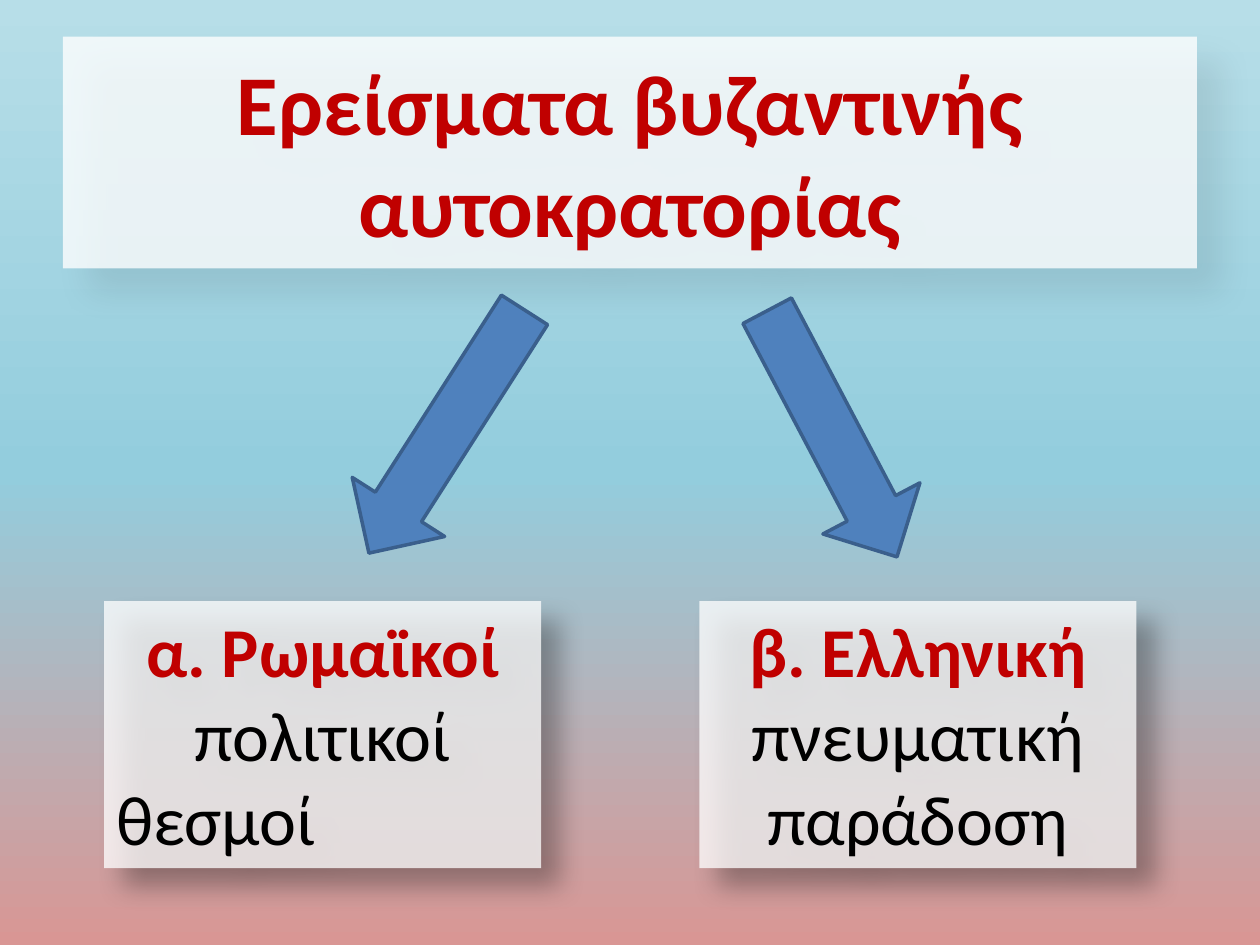
from lxml import etree
from pptx import Presentation
from pptx.dml.color import RGBColor
from pptx.enum.shapes import MSO_SHAPE
from pptx.enum.text import MSO_ANCHOR, MSO_AUTO_SIZE, PP_ALIGN
from pptx.oxml.ns import qn
from pptx.util import Cm, Pt

RECTANGLE, DOWN_ARROW = MSO_SHAPE.RECTANGLE, MSO_SHAPE.DOWN_ARROW
CENTER, LEFT = PP_ALIGN.CENTER, PP_ALIGN.LEFT
TOP, MIDDLE = MSO_ANCHOR.TOP, MSO_ANCHOR.MIDDLE
FIT_SHAPE, FIT_NONE = MSO_AUTO_SIZE.SHAPE_TO_FIT_TEXT, MSO_AUTO_SIZE.NONE


def rgb(hex_color):
    return RGBColor.from_string(hex_color)


def add_color(parent, hex_color, alpha=100):
    color = etree.SubElement(parent, qn("a:srgbClr"), val=hex_color)
    if alpha < 100:
        etree.SubElement(color, qn("a:alpha"), val=str(alpha * 1000))


class SlideBuilder:
    """Holds the style and the current slide, and draws each kind of element."""

    font = "Calibri"
    accent, ink, panel_fill = "C00000", "000000", "FFFFFF"
    arrow_fill, arrow_line = "4F81BD", "3A5F8C"

    def __init__(self, slide):
        self.slide = slide

    def background(self, stops):
        fill = self.slide.background.fill
        fill.gradient()
        fill.gradient_angle = 270
        stop_list = next(self.slide.background._cSld.iter(qn("a:gsLst")))
        for old_stop in list(stop_list):
            stop_list.remove(old_stop)
        for position, color in stops:
            stop = etree.SubElement(stop_list, qn("a:gs"), pos=str(position * 1000))
            add_color(stop, color)

    def shape(self, kind, left, top, width, height, fill):
        shape = self.slide.shapes.add_shape(kind, Cm(left), Cm(top), Cm(width), Cm(height))
        shape.shadow.inherit = False
        shape.fill.solid()
        shape.fill.fore_color.rgb = rgb(fill)
        return shape

    def panel(self, left, top, width, height, paragraphs, size, opacity, shadow,
              anchor=TOP, fit=FIT_SHAPE):
        panel = self.shape(RECTANGLE, left, top, width, height, self.panel_fill)
        panel.line.fill.background()
        properties = panel._element.spPr
        fill_color = properties.find(qn("a:solidFill")).find(qn("a:srgbClr"))
        etree.SubElement(fill_color, qn("a:alpha"), val=str(opacity * 1000))
        shadow_alpha, distance = shadow
        outer = etree.SubElement(
            properties.find(qn("a:effectLst")), qn("a:outerShdw"),
            blurRad=str(Pt(distance)), dist=str(Pt(distance)), dir="2700000",
            algn="tl", rotWithShape="0")
        add_color(outer, self.ink, shadow_alpha)

        frame = panel.text_frame
        frame.word_wrap = True
        frame.auto_size = fit
        frame.vertical_anchor = anchor
        for index, (alignment, runs) in enumerate(paragraphs):
            paragraph = frame.add_paragraph() if index else frame.paragraphs[0]
            paragraph.alignment = alignment
            for text, is_accent in runs:
                run = paragraph.add_run()
                run.text = text
                run.font.name = self.font
                run.font.size = Pt(size)
                run.font.bold = is_accent
                run.font.color.rgb = rgb(self.accent if is_accent else self.ink)

    def arrow(self, left, top, width, height, rotation):
        arrow = self.shape(DOWN_ARROW, left, top, width, height, self.arrow_fill)
        arrow.line.color.rgb = rgb(self.arrow_line)
        arrow.line.width = Pt(2)
        arrow.rotation = rotation


def main():
    deck = Presentation()
    deck.slide_width, deck.slide_height = Cm(25.4), Cm(19.05)
    builder = SlideBuilder(deck.slides.add_slide(deck.slide_layouts[6]))
    builder.background([(0, "B7DEE8"), (50, "93CDDD"), (100, "D99694")])

    title = [(CENTER, [("Ερείσματα βυζαντινής αυτοκρατορίας", True)])]
    builder.panel(1.27, 0.74, 22.86, 4.67, title, 48.6, 79, (10, 19), MIDDLE, FIT_NONE)

    roman = [(CENTER, [("α. Ρωμαϊκοί", True), (" πολιτικοί", False)]),
             (LEFT, [("θεσμοί", False)])]
    greek = [(CENTER, [("β. Ελληνική", True), (" πνευματική παράδοση", False)])]
    pillars = [
        (2.1, roman, (7.9, 5.79, 2.21, 5.82, 32.6)),
        (14.1, greek, (15.67, 5.94, 2.21, 5.61, 332.2)),
    ]
    for left, paragraphs, arrow in pillars:
        builder.arrow(*arrow)
        builder.panel(left, 12.12, 8.81, 5.38, paragraphs, 40, 76, (40, 15))

    deck.save("out.pptx")


if __name__ == "__main__":
    main()
